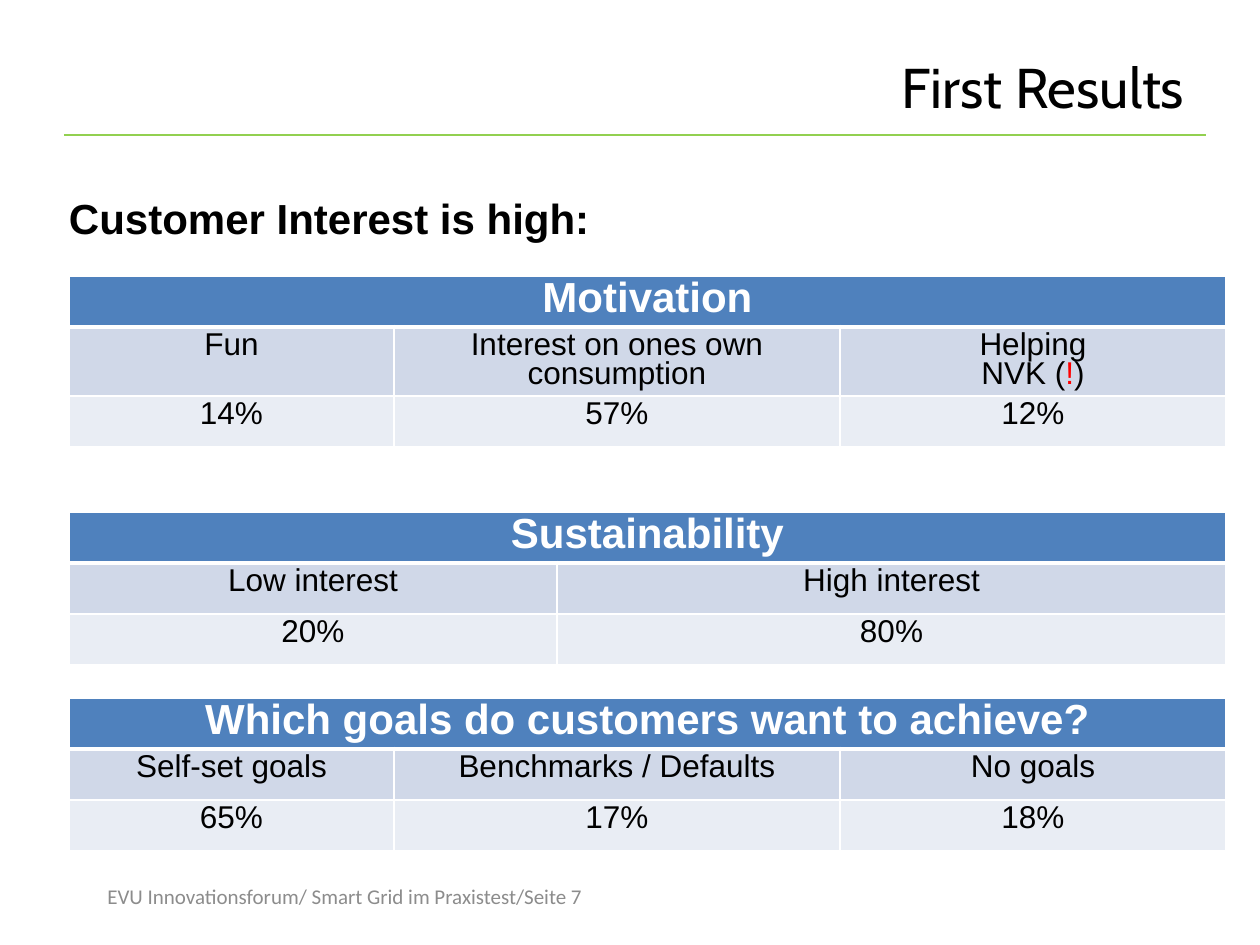
"""Build the First Results slide with its three survey tables."""
from dataclasses import dataclass
from typing import Any

from lxml import etree
from pptx import Presentation
from pptx.dml.color import RGBColor
from pptx.enum import shapes, text
from pptx.oxml import ns
from pptx.util import Emu, Pt

SCALE = 914400 / 126
BLACK = RGBColor(0x00, 0x00, 0x00)
WHITE = RGBColor(0xFF, 0xFF, 0xFF)
RED = RGBColor(0xFF, 0x00, 0x00)
GREEN = RGBColor(0x92, 0xD0, 0x50)
GRAY = RGBColor(0x8C, 0x8C, 0x8C)
BLUE = RGBColor(0x4F, 0x81, 0xBD)
PALE = RGBColor(0xD0, 0xD8, 0xE8)
FAINT = RGBColor(0xE9, 0xED, 0xF4)
ROW = 51
LEFT = 69


@dataclass
class Run:
    words: str
    size: int = 18
    color: RGBColor = BLACK
    bold: bool = False
    font: str = "Arial"


Lines = list[list[Run]]


@dataclass
class Survey:
    top: int
    title: str
    cols: list[int]
    labels: list[Lines]
    values: list[str]


def px(count: int) -> Emu:
    return Emu(round(count * SCALE))


def line(words: str) -> Lines:
    return [[Run(words)]]


def write(frame: Any, lines: Lines, align: Any, space: float = 1.0) -> None:
    for i, runs in enumerate(lines):
        para = frame.paragraphs[0] if i == 0 else frame.add_paragraph()
        para.alignment = align
        para.line_spacing = space
        for item in runs:
            run = para.add_run()
            run.text = item.words
            run.font.name = item.font
            run.font.size = Pt(item.size)
            run.font.bold = item.bold
            run.font.color.rgb = item.color


def edge(cell: Any, widths: dict[str, int]) -> None:
    props = cell._tc.get_or_add_tcPr()
    for side, width in widths.items():
        rule = etree.SubElement(props, ns.qn(f"a:ln{side}"), w=str(Pt(width)))
        fill = etree.SubElement(rule, ns.qn("a:solidFill"))
        etree.SubElement(fill, ns.qn("a:srgbClr"), val=str(WHITE))


def draw_table(slide: Any, survey: Survey) -> None:
    count = len(survey.cols)
    frame = slide.shapes.add_table(3, count, px(LEFT), px(survey.top),
                                   px(sum(survey.cols)), px(3 * ROW))
    table = frame.table
    for col, width in zip(table.columns, survey.cols):
        col.width = px(width)
    for row in table.rows:
        row.height = px(ROW)
    table.cell(0, 0).merge(table.cell(0, count - 1))
    head = [[Run(survey.title, 24, WHITE, True)]]
    rows = [
        ([head], BLUE, 1, 3),
        (survey.labels, PALE, 3, 1),
        ([line(value) for value in survey.values], FAINT, 1, 1),
    ]
    for r, (texts, fill, above, below) in enumerate(rows):
        for c in range(count):
            cell = table.cell(r, c)
            edge(cell, {"L": 1, "R": 1, "T": above, "B": below})
            cell.fill.solid()
            cell.fill.fore_color.rgb = fill
            if c < len(texts):
                write(cell.text_frame, texts[c], text.PP_ALIGN.CENTER, 0.8)


def draw_text(slide: Any, box: tuple[int, int, int, int], run: Run,
              inset: bool = True) -> None:
    frame = slide.shapes.add_textbox(*map(px, box)).text_frame
    frame.word_wrap = True
    frame.vertical_anchor = text.MSO_ANCHOR.MIDDLE
    if not inset:
        frame.margin_left = frame.margin_right = 0
        frame.margin_top = frame.margin_bottom = 0
    write(frame, [[run]], text.PP_ALIGN.LEFT)


def draw_title(slide: Any) -> None:
    title = slide.shapes.title
    title.left, title.top, title.width, title.height = map(px, (63, 38, 1134, 97))
    title.text_frame.vertical_anchor = text.MSO_ANCHOR.MIDDLE
    write(title.text_frame, [[Run("First Results", 32, font="Cabin")]],
          text.PP_ALIGN.RIGHT)


def draw_rule(slide: Any) -> None:
    rule = slide.shapes.add_connector(shapes.MSO_CONNECTOR.STRAIGHT,
                                      px(64), px(135), px(1206), px(135))
    rule.line.color.rgb = GREEN
    rule.line.width = Pt(1.5)
    etree.SubElement(rule._element.spPr, ns.qn("a:effectLst"))


THIRDS = [325, 446, 386]
HELP = [[Run("Helping")], [Run("NVK ("), Run("!", color=RED), Run(")")]]
SURVEYS = [
    Survey(276, "Motivation", THIRDS,
           [line("Fun"), line("Interest on ones own consumption"), HELP],
           ["14%", "57%", "12%"]),
    Survey(512, "Sustainability", [488, 669],
           [line("Low interest"), line("High interest")], ["20%", "80%"]),
    Survey(698, "Which goals do customers want to achieve?", THIRDS,
           [line("Self-set goals"), line("Benchmarks / Defaults"), line("No goals")],
           ["65%", "17%", "18%"]),
]


def main() -> None:
    deck = Presentation()
    deck.slide_width, deck.slide_height = px(1260), px(945)
    slide = deck.slides.add_slide(deck.slide_layouts[5])
    draw_rule(slide)
    draw_title(slide)
    for survey in SURVEYS:
        draw_table(slide, survey)
    draw_text(slide, (LEFT, 168, 1131, 100),
              Run("Customer Interest is high:", 24, bold=True), inset=False)
    draw_text(slide, (95, 879, 517, 34),
              Run("EVU Innovationsforum/ Smart Grid im Praxistest/Seite 7",
                  12, GRAY, font="Calibri"))
    deck.save("out.pptx")


if __name__ == "__main__":
    main()
